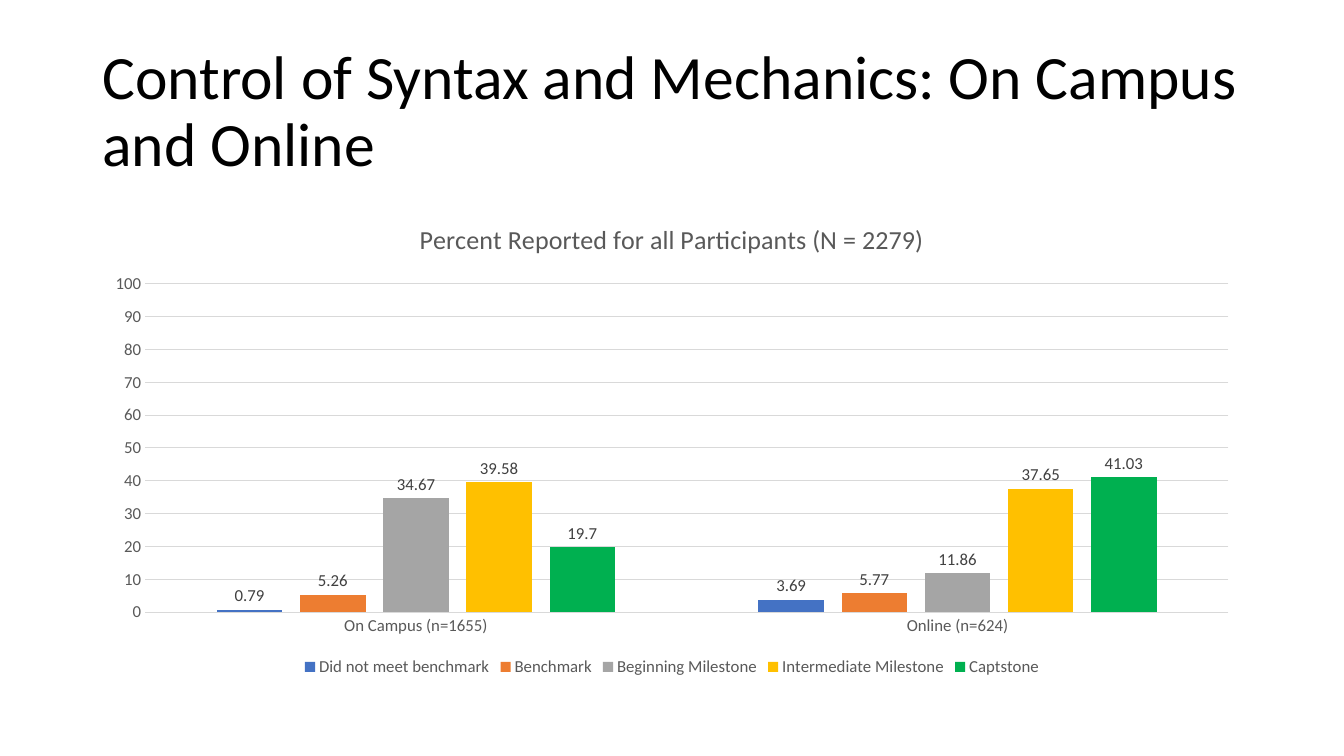
from dataclasses import dataclass

from pptx import Presentation
from pptx.chart.data import CategoryChartData as ChartData
from pptx.dml.color import RGBColor as Rgb
from pptx.enum.chart import XL_CHART_TYPE as Kind
from pptx.enum.chart import XL_LABEL_POSITION as LabelPos
from pptx.enum.chart import XL_LEGEND_POSITION as LegendPos
from pptx.enum.chart import XL_TICK_MARK as Tick
from pptx.enum.text import MSO_ANCHOR as Anchor
from pptx.util import Cm, Pt


@dataclass(frozen=True)
class Theme:
    face: str = "Calibri"
    ink: str = "000000"
    soft: str = "595959"
    label: str = "404040"
    rule: str = "D9D9D9"
    head: float = 44
    title: float = 18.6
    small: float = 12


THEME = Theme()
GROUPS = ["On Campus (n=1655)", "Online (n=624)"]
LEVELS = [
    ("Did not meet benchmark", (0.79, 3.69), "4472C4"),
    ("Benchmark", (5.26, 5.77), "ED7D31"),
    ("Beginning Milestone", (34.67, 11.86), "A5A5A5"),
    ("Intermediate Milestone", (39.58, 37.65), "FFC000"),
    ("Captstone", (19.7, 41.03), "00B050"),
]


def put(item, values):
    """Set each named value as an attribute of item."""
    for name, value in values.items():
        setattr(item, name, value)


def set_font(font, size, color):
    put(font, {"name": THEME.face, "size": Pt(size), "bold": False})
    font.color.rgb = Rgb.from_string(color)


def set_line(line):
    line.width = Pt(0.75)
    line.color.rgb = Rgb.from_string(THEME.rule)


def add_head(slide, text, box):
    frame = slide.shapes.add_textbox(*box).text_frame
    put(frame, {"word_wrap": True, "vertical_anchor": Anchor.MIDDLE})
    para = frame.paragraphs[0]
    put(para, {"text": text, "line_spacing": 0.9})
    set_font(para.runs[0].font, THEME.head, THEME.ink)


def set_title(chart, text):
    chart.has_title = True
    para = chart.chart_title.text_frame.paragraphs[0]
    run = para.add_run()
    run.text = text
    set_font(run.font, THEME.title, THEME.soft)


def set_axes(chart):
    groups, scale = chart.category_axis, chart.value_axis
    for axis in (groups, scale):
        put(axis, {"major_tick_mark": Tick.NONE, "minor_tick_mark": Tick.NONE})
        set_font(axis.tick_labels.font, THEME.small, THEME.soft)
    set_line(groups.format.line)
    put(scale, {"minimum_scale": 0, "maximum_scale": 100, "major_unit": 10,
                "has_major_gridlines": True})
    put(scale.tick_labels, {"number_format": "General",
                            "number_format_is_linked": False})
    scale.format.line.fill.background()
    set_line(scale.major_gridlines.format.line)


def set_legend(chart):
    chart.has_legend = True
    put(chart.legend, {"position": LegendPos.BOTTOM,
                       "include_in_layout": False})
    set_font(chart.legend.font, THEME.small, THEME.soft)


def set_bars(plot):
    put(plot, {"gap_width": 219, "overlap": -27, "vary_by_categories": False})
    for bars, (_, _, color) in zip(plot.series, LEVELS):
        bars.format.fill.solid()
        bars.format.fill.fore_color.rgb = Rgb.from_string(color)
        labels = bars.data_labels
        put(labels, {"show_value": True, "position": LabelPos.OUTSIDE_END})
        set_font(labels.font, THEME.small, THEME.label)


def add_bars(slide, title, box):
    data = ChartData()
    data.categories = GROUPS
    for name, values, _ in LEVELS:
        data.add_series(name, values)
    chart = slide.shapes.add_chart(Kind.COLUMN_CLUSTERED, *box, data).chart
    set_font(chart.font, 10, THEME.ink)
    set_title(chart, title)
    set_axes(chart)
    set_legend(chart)
    set_bars(chart.plots[0])


def main():
    deck = Presentation()
    put(deck, {"slide_width": Cm(33.87), "slide_height": Cm(19.05)})
    slide = deck.slides.add_slide(deck.slide_layouts[6])
    left, width = Cm(2.33), Cm(29.21)
    add_head(slide, "Control of Syntax and Mechanics: On Campus and Online",
             (left, Cm(1.01), width, Cm(3.68)))
    add_bars(slide, "Percent Reported for all Participants (N = 2279)",
             (left, Cm(5.07), width, Cm(12.09)))
    deck.save("out.pptx")


if __name__ == "__main__":
    main()
